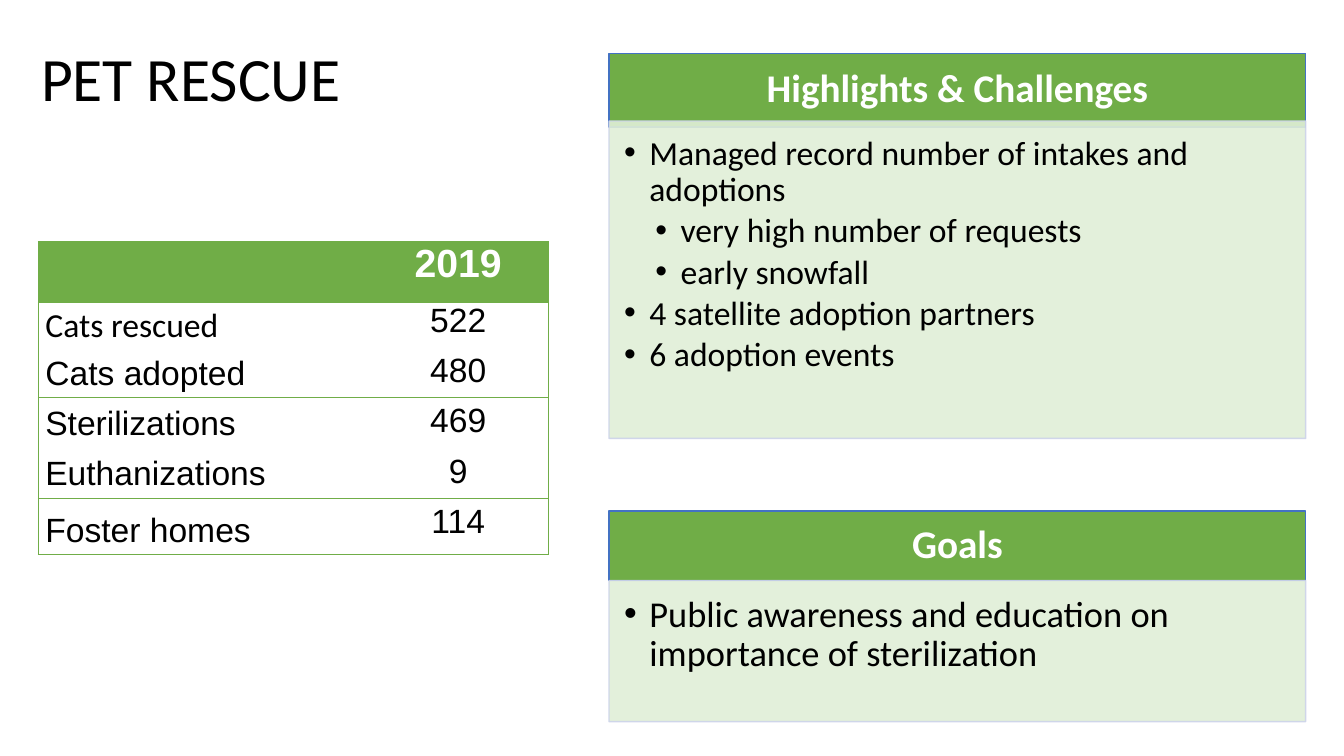
from dataclasses import dataclass

from lxml.etree import SubElement
from pptx import Presentation
from pptx.dml.color import RGBColor
from pptx.enum.shapes import MSO_SHAPE
from pptx.enum.text import MSO_ANCHOR, PP_ALIGN
from pptx.oxml.ns import qn
from pptx.util import Inches, Pt

TITLE = "PET RESCUE"
YEAR = "2019"
STATISTICS = [
    ("Cats rescued", "522"),
    ("Cats adopted", "480"),
    ("Sterilizations", "469"),
    ("Euthanizations", "9"),
    ("Foster homes", "114"),
]
# Bullets are (indent level, text); tops and heights are in inches.
PANELS = [
    {
        "heading": "Highlights & Challenges",
        "heading_rows": (0.53, 0.73),
        "body_rows": (1.2, 3.15),
        "size": 24,
        "space_before": 3.6,
        "bullets": [
            (0, "Managed record number of intakes and adoptions"),
            (1, "very high number of requests"),
            (1, "early snowfall"),
            (0, "4 satellite adoption partners"),
            (0, "6 adoption events"),
        ],
    },
    {
        "heading": "Goals",
        "heading_rows": (5.07, 0.69),
        "body_rows": (5.76, 1.4),
        "size": 26,
        "space_before": 3.9,
        "bullets": [(0, "Public awareness and education on importance of sterilization")],
    },
]
PANEL_LEFT, PANEL_WIDTH = 6.04, 6.91
BULLET_HANG, LEVEL_STEP = 0.25, 0.31
TABLE_LEFT, TABLE_TOP = 0.38, 2.4
TABLE_COLUMNS = (3.27, 1.79)
TABLE_ROWS = (0.6, 0.44, 0.5, 0.5, 0.5, 0.56)
RULED_ROWS = (0, 2, 4, 5)


@dataclass(frozen=True)
class Theme:
    green: str = "70AD47"
    pale_green: str = "E1EFD8"
    blue: str = "4372C3"
    pale_blue: str = "CCD3EA"
    black: str = "000000"
    white: str = "FFFFFF"
    sans: str = "Calibri"
    table_font: str = "Arial"
    title_size: int = 44
    heading_size: int = 28
    table_size: int = 24
    line_spacing: float = 0.9
    panel_alpha: int = 90


THEME = Theme()


def color(value):
    return RGBColor.from_string(value)


def style(para, size, value, name=THEME.sans, bold=False):
    for span in para.runs:
        span.font.size = Pt(size)
        span.font.name = name
        span.font.bold = bold
        span.font.color.rgb = color(value)


def set_margins(target, left, top, right, bottom):
    target.margin_left, target.margin_top = Inches(left), Inches(top)
    target.margin_right, target.margin_bottom = Inches(right), Inches(bottom)


def add_title(page):
    box = page.shapes.add_textbox(Inches(0.31), Inches(0.08), Inches(11.5), Inches(1.45))
    frame = box.text_frame
    frame.word_wrap = True
    frame.vertical_anchor = MSO_ANCHOR.MIDDLE
    frame.text = TITLE
    para = frame.paragraphs[0]
    para.line_spacing = THEME.line_spacing
    style(para, THEME.title_size, THEME.black)


def add_block(page, rows, fill, line):
    top, height = rows
    block = page.shapes.add_shape(
        MSO_SHAPE.RECTANGLE,
        Inches(PANEL_LEFT), Inches(top), Inches(PANEL_WIDTH), Inches(height),
    )
    block.shadow.inherit = False
    block.fill.solid()
    block.fill.fore_color.rgb = color(fill)
    block.line.color.rgb = color(line)
    block.line.width = Pt(1)
    block.text_frame.word_wrap = True
    return block


def set_alpha(block, percent):
    for tint in block.element.spPr.iter(qn("a:srgbClr")):
        SubElement(tint, qn("a:alpha"), val=str(percent * 1000))


def add_bullet(para, level):
    properties = para._p.get_or_add_pPr()
    properties.set("marL", str(Inches(BULLET_HANG + level * LEVEL_STEP)))
    properties.set("indent", str(-Inches(BULLET_HANG)))
    SubElement(properties, qn("a:buFont"), typeface="Arial")
    SubElement(properties, qn("a:buChar"), char="•")


def add_panel(page, panel):
    heading = add_block(page, panel["heading_rows"], THEME.green, THEME.blue)
    frame = heading.text_frame
    set_margins(frame, 0.2, 0.12, 0.2, 0.12)
    frame.vertical_anchor = MSO_ANCHOR.MIDDLE
    frame.text = panel["heading"]
    para = frame.paragraphs[0]
    para.alignment = PP_ALIGN.CENTER
    para.line_spacing = THEME.line_spacing
    style(para, THEME.heading_size, THEME.white, bold=True)

    body = add_block(page, panel["body_rows"], THEME.pale_green, THEME.pale_blue)
    set_alpha(body, THEME.panel_alpha)
    frame = body.text_frame
    set_margins(frame, 0.15, 0.15, 0.2, 0.23)
    frame.vertical_anchor = MSO_ANCHOR.TOP
    for index, (level, text) in enumerate(panel["bullets"]):
        para = frame.add_paragraph() if index else frame.paragraphs[0]
        para.text = text
        add_bullet(para, level)
        para.alignment = PP_ALIGN.LEFT
        para.line_spacing = THEME.line_spacing
        if index:
            para.space_before = Pt(panel["space_before"])
        style(para, panel["size"], THEME.black)


def set_borders(cell, drawn):
    """Draw the named sides (L, R, T, B) in green and clear the others."""
    properties = cell._tc.get_or_add_tcPr()
    for side in "LRTB":
        line = SubElement(properties, qn(f"a:ln{side}"), w=str(Pt(0.75)))
        if side in drawn:
            fill = SubElement(line, qn("a:solidFill"))
            SubElement(fill, qn("a:srgbClr"), val=THEME.green)
        else:
            SubElement(line, qn("a:noFill"))


def add_statistics(page):
    table = page.shapes.add_table(
        len(TABLE_ROWS), len(TABLE_COLUMNS), Inches(TABLE_LEFT), Inches(TABLE_TOP),
        Inches(sum(TABLE_COLUMNS)), Inches(sum(TABLE_ROWS)),
    ).table
    table.horz_banding = False
    for column, width in zip(table.columns, TABLE_COLUMNS):
        column.width = Inches(width)
    for row, height in zip(table.rows, TABLE_ROWS):
        row.height = Inches(height)

    for row, texts in enumerate([("", YEAR), *STATISTICS]):
        inset = 0.05 if row > 1 else 0
        for column, text in enumerate(texts):
            cell = table.cell(row, column)
            sides = "R" if column else "L"
            sides += "T" if row == 0 or row - 1 in RULED_ROWS else ""
            sides += "B" if row in RULED_ROWS else ""
            set_borders(cell, sides)
            cell.fill.solid()
            cell.fill.fore_color.rgb = color(THEME.white if row else THEME.green)
            set_margins(cell, 0.07, inset, 0.07, inset)
            cell.vertical_anchor = MSO_ANCHOR.TOP if column else MSO_ANCHOR.BOTTOM
            cell.text = text
            para = cell.text_frame.paragraphs[0]
            para.alignment = PP_ALIGN.CENTER if column else PP_ALIGN.LEFT
            if row == 0:
                style(para, THEME.heading_size, THEME.white, THEME.table_font, bold=True)
            else:
                name = THEME.sans if (row, column) == (1, 0) else THEME.table_font
                style(para, THEME.table_size, THEME.black, name)


def main():
    deck = Presentation()
    deck.slide_width, deck.slide_height = Inches(13.33), Inches(7.5)
    page = deck.slides.add_slide(deck.slide_layouts[6])
    add_title(page)
    for panel in PANELS:
        add_panel(page, panel)
    add_statistics(page)
    deck.save("out.pptx")


if __name__ == "__main__":
    main()
